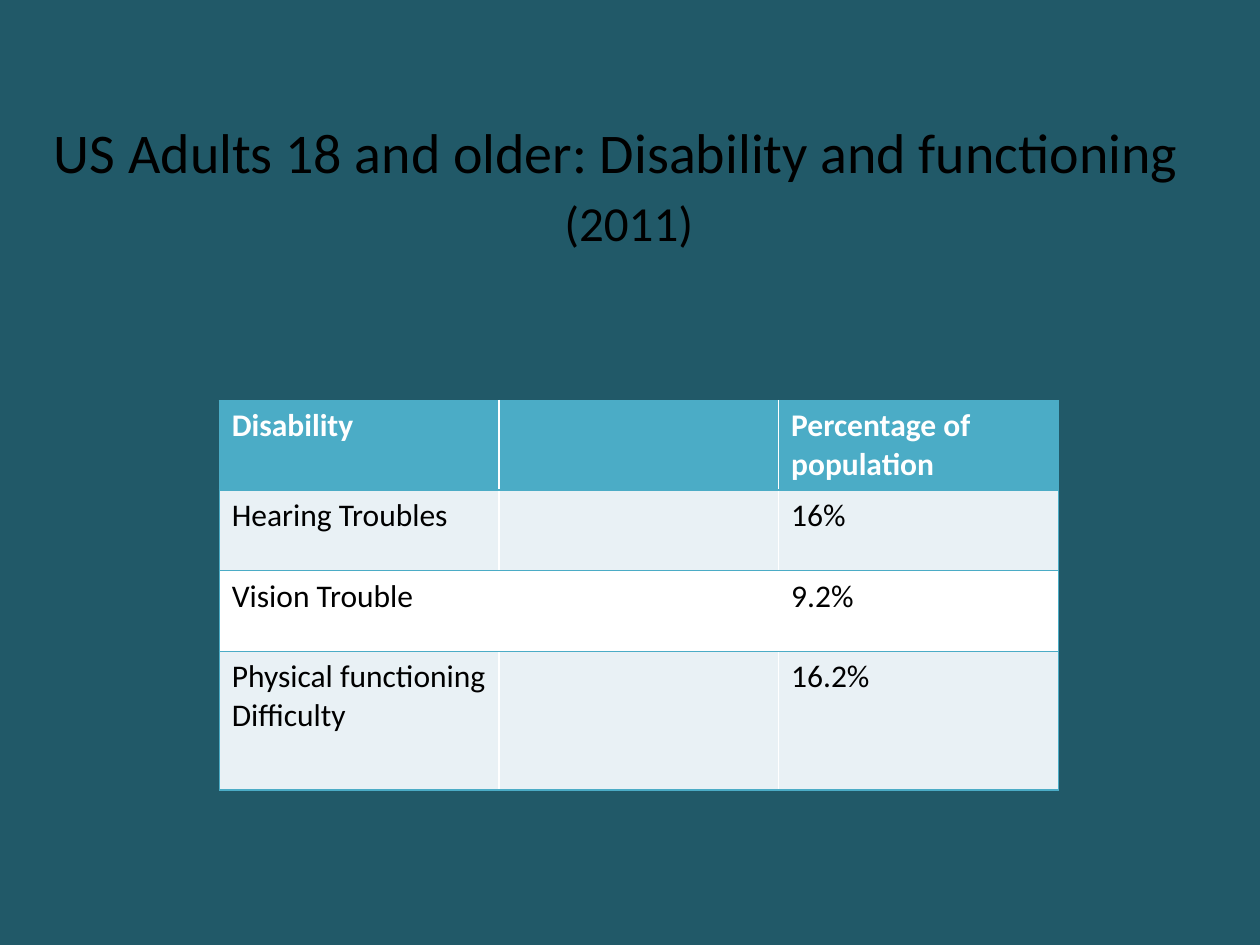
import pptx
import pptx.util
import pptx.dml.color
import pptx.enum.text
import pptx.oxml
import pptx.oxml.ns
from pptx.util import Inches

RGBColor = pptx.dml.color.RGBColor
BACKDROP = RGBColor(0x21, 0x59, 0x68)
ACCENT = RGBColor(0x4B, 0xAC, 0xC6)
PALE = RGBColor(0xE9, 0xF1, 0xF5)
WHITE = RGBColor(0xFF, 0xFF, 0xFF)
BLACK = RGBColor(0, 0, 0)


def style_text(paragraph, size, color, bold=False):
    for run in paragraph.runs:
        run.font.name = "Calibri"
        run.font.size = pptx.util.Pt(size)
        run.font.bold = bold
        run.font.color.rgb = color


def add_borders(cell, sides):
    properties = cell._tc.get_or_add_tcPr()
    for position, side in enumerate(sides):
        border = pptx.oxml.parse_xml(
            f'<a:ln{side} {pptx.oxml.ns.nsdecls("a")} w="12700"><a:solidFill>'
            f'<a:srgbClr val="{ACCENT}"/></a:solidFill></a:ln{side}>')
        properties.insert(position, border)


deck = pptx.Presentation()
deck.slide_width = Inches(10)
deck.slide_height = Inches(7.5)
slide = deck.slides.add_slide(deck.slide_layouts[6])
slide.background.fill.solid()
slide.background.fill.fore_color.rgb = BACKDROP

# Heading with the year centred below it
heading = slide.shapes.add_textbox(Inches(0.13), Inches(0.88), Inches(9.72), Inches(1.3))
heading.text_frame.word_wrap = True
title = heading.text_frame.paragraphs[0]
title.text = "US Adults 18 and older: Disability and functioning"
title._p.get_or_add_pPr().set("marL", str(Inches(0.2)))
style_text(title, 32, BLACK)
year = heading.text_frame.add_paragraph()
year.text = "(2011)"
year.alignment = pptx.enum.text.PP_ALIGN.CENTER
year.space_before = pptx.util.Pt(5)
style_text(year, 28, BLACK)

# Disability table; the middle column is empty
rows = [
    ("Disability", "", "Percentage of population"),
    ("Hearing Troubles", "", "16%"),
    ("Vision Trouble", "", "9.2%"),
    ("Physical functioning Difficulty", "", "16.2%"),
]
row_heights = [0.71, 0.64, 0.64, 1.1]
row_fills = [ACCENT, PALE, WHITE, PALE]
column_sides = ["LTB", "TB", "RTB"]

disabilities = slide.shapes.add_table(
    len(rows), 3, Inches(1.74), Inches(3.18), Inches(6.66), Inches(sum(row_heights))).table
for column in disabilities.columns:
    column.width = Inches(2.22)
for r, texts in enumerate(rows):
    disabilities.rows[r].height = Inches(row_heights[r])
    for c, text in enumerate(texts):
        cell = disabilities.cell(r, c)
        cell.fill.solid()
        cell.fill.fore_color.rgb = row_fills[r]
        add_borders(cell, column_sides[c])
        if text:
            cell.text_frame.text = text
            style_text(cell.text_frame.paragraphs[0], 18, BLACK if r else WHITE, bold=r == 0)

deck.save("out.pptx")
